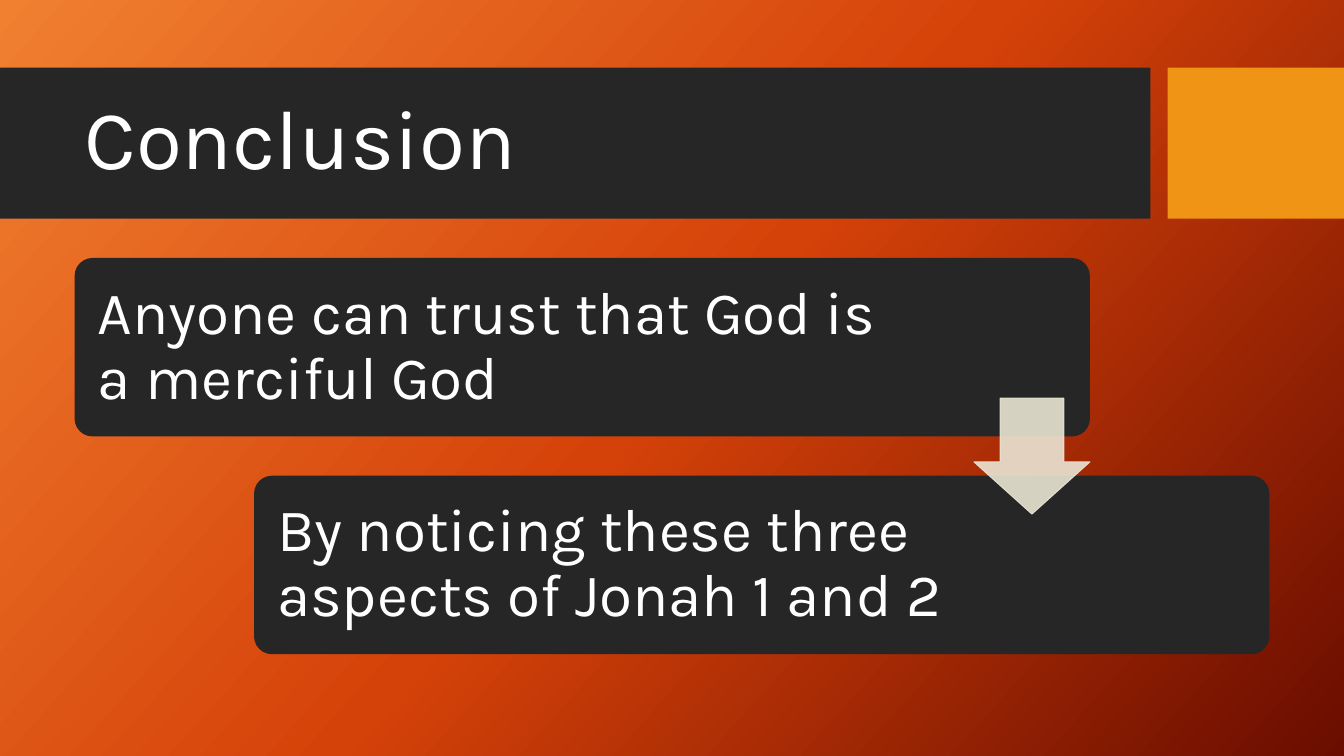
from copy import deepcopy
from dataclasses import dataclass

from lxml.etree import SubElement
from pptx import Presentation
from pptx.dml.color import RGBColor
from pptx.enum.shapes import MSO_SHAPE as Shape
from pptx.enum.text import MSO_ANCHOR as Anchor
from pptx.oxml.ns import qn
from pptx.shapes.autoshape import Shape as AutoShape
from pptx.slide import Slide
from pptx.util import Inches, Pt


@dataclass(frozen=True)
class Theme:
    font: str = "Karla"
    title_size: int = 60
    body_size: int = 43
    text: str = "FFFFFF"
    panel: str = "262626"
    accent: str = "F09415"
    arrow: str = "E9E5D4"
    arrow_opacity: int = 90
    gradient: tuple[str, ...] = ("F18031", "D54209", "6A0D00")
    gradient_angle: int = 42


@dataclass(frozen=True)
class Box:
    left: float
    top: float
    width: float
    height: float

    def lengths(self) -> tuple[Inches, ...]:
        return tuple(Inches(v) for v in (self.left, self.top, self.width, self.height))


@dataclass(frozen=True)
class Step:
    statement: str
    text_width: float


THEME = Theme()
STEPS = (
    Step("Anyone can trust that God is a merciful God", 8.24),
    Step("By noticing these three aspects of Jonah 1 and 2", 7.04),
)
FIRST_CARD = Box(0.74, 2.56, 10.07, 1.77)
CARD_SHIFT = (1.78, 2.16)
CARD_PADDING = 0.05


def paint_background(slide: Slide) -> None:
    fill = slide.background.fill
    fill.gradient()
    fill.gradient_angle = 360 - THEME.gradient_angle
    stop_list = slide.element.find(".//" + qn("a:gsLst"))
    stop_list.append(deepcopy(stop_list[-1]))
    last = len(THEME.gradient) - 1
    for index, (stop, color) in enumerate(zip(fill.gradient_stops, THEME.gradient)):
        stop.color.rgb = RGBColor.from_string(color)
        stop.position = index / last


def add_block(slide: Slide, kind: Shape, box: Box, color: str,
              adjustments: tuple[float, ...] = ()) -> AutoShape:
    block = slide.shapes.add_shape(kind, *box.lengths())
    block.shadow.inherit = False
    block.fill.solid()
    block.fill.fore_color.rgb = RGBColor.from_string(color)
    block.line.fill.background()
    for index, value in enumerate(adjustments):
        block.adjustments[index] = value
    return block


def add_text(slide: Slide, box: Box, words: str, size: int,
             inset: float | None = None) -> None:
    frame = slide.shapes.add_textbox(*box.lengths()).text_frame
    frame.text = words
    frame.word_wrap = True
    frame.vertical_anchor = Anchor.MIDDLE
    if inset is not None:
        frame.margin_left = frame.margin_right = Inches(inset)
        frame.margin_top = frame.margin_bottom = Inches(inset)
    paragraph = frame.paragraphs[0]
    paragraph.line_spacing = 0.9
    font = paragraph.runs[0].font
    font.name = THEME.font
    font.size = Pt(size)
    font.color.rgb = RGBColor.from_string(THEME.text)


def add_step(slide: Slide, index: int, step: Step) -> None:
    card = Box(FIRST_CARD.left + index * CARD_SHIFT[0],
               FIRST_CARD.top + index * CARD_SHIFT[1],
               FIRST_CARD.width, FIRST_CARD.height)
    add_block(slide, Shape.ROUNDED_RECTANGLE, card, THEME.panel, (0.1,))
    statement_box = Box(card.left + CARD_PADDING, card.top + CARD_PADDING,
                        step.text_width, card.height - 2 * CARD_PADDING)
    add_text(slide, statement_box, step.statement, THEME.body_size, 0.18)


def add_arrow(slide: Slide) -> None:
    arrow = add_block(slide, Shape.DOWN_ARROW, Box(9.66, 3.95, 1.15, 1.15),
                      THEME.arrow, (0.55, 0.45))
    arrow.line.color.rgb = RGBColor.from_string(THEME.arrow)
    arrow.line.width = Pt(0.75)
    for color in arrow.element.spPr.iter(qn("a:srgbClr")):
        SubElement(color, qn("a:alpha"), val=str(THEME.arrow_opacity * 1000))


def main() -> None:
    deck = Presentation()
    deck.slide_width, deck.slide_height = Inches(13.33), Inches(7.5)
    slide = deck.slides.add_slide(deck.slide_layouts[6])
    paint_background(slide)
    add_block(slide, Shape.RECTANGLE, Box(0, 0.67, 11.41, 1.5), THEME.panel)
    add_block(slide, Shape.RECTANGLE, Box(11.58, 0.67, 1.75, 1.5), THEME.accent)
    add_text(slide, Box(0.74, 0.82, 10.51, 1.18), "Conclusion", THEME.title_size)
    for index, step in enumerate(STEPS):
        add_step(slide, index, step)
    add_arrow(slide)
    deck.save("out.pptx")


if __name__ == "__main__":
    main()
